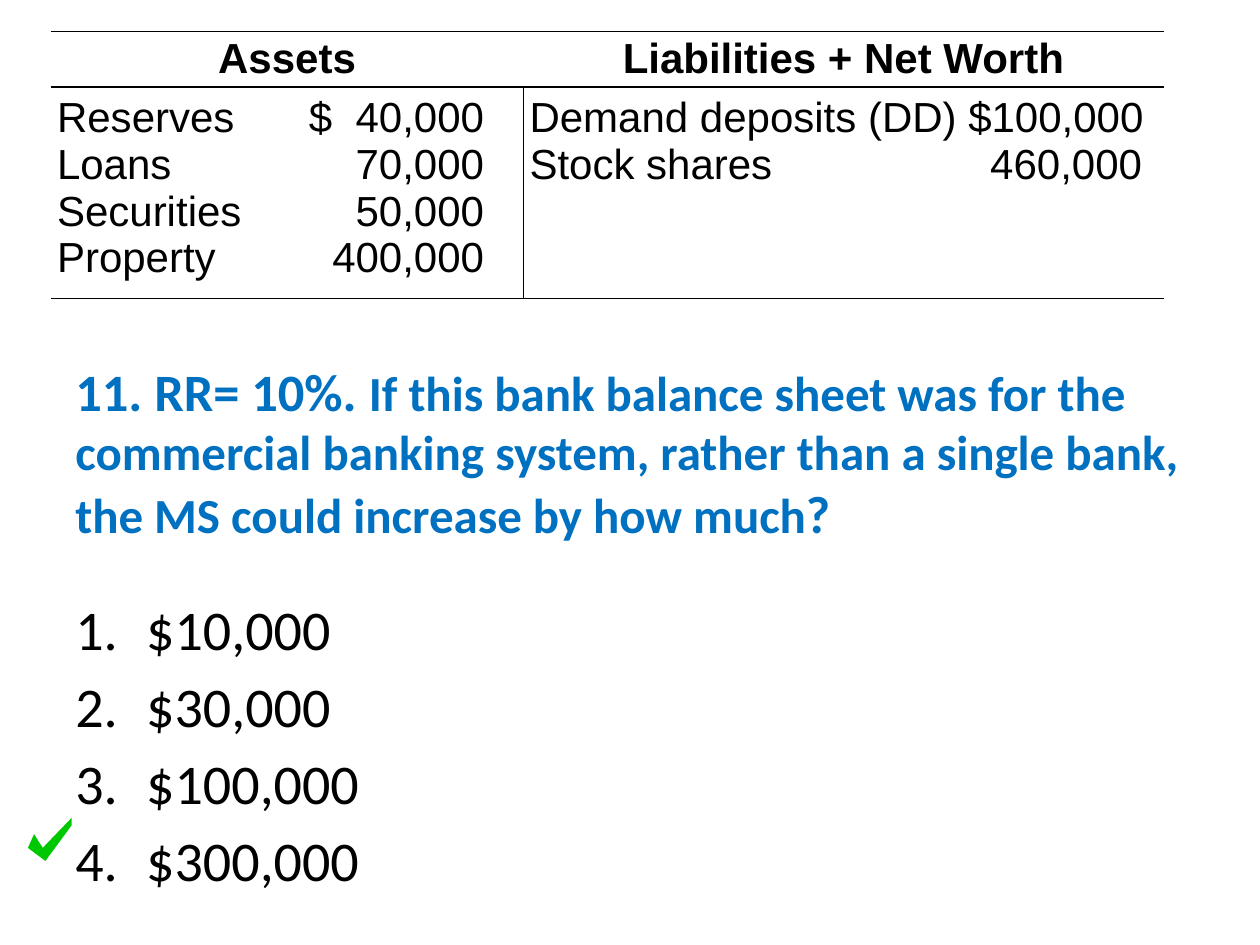
from lxml import etree
from pptx import Presentation
from pptx import util as u
from pptx.dml.color import RGBColor
from pptx.enum import text
from pptx.oxml import ns

BLACK, BLUE, GREEN = "000000", "0070C0", "00C800"
NO_STYLE = "{2D5ABB26-0587-4C30-8999-92F81FD0307C}"


def color(value):
    return RGBColor.from_string(value)


def element(parent, tag, **attributes):
    return etree.SubElement(parent, ns.qn(tag), attributes)


class SlideBuilder:
    """Holds the text style and current slide, and adds elements to it."""

    def __init__(self, slide, body_font="Calibri", table_font="Arial"):
        self.slide = slide
        self.body_font = body_font
        self.table_font = table_font

    def format_run(self, run, font, size, value, bold=False):
        run.font.name = font
        run.font.size = u.Pt(size)
        run.font.bold = bold
        run.font.color.rgb = color(value)

    def text_box(self, left, top, width, height, anchor):
        shape = self.slide.shapes.add_textbox(
            u.Pt(left), u.Pt(top), u.Pt(width), u.Pt(height))
        frame = shape.text_frame
        frame.word_wrap = True
        frame.vertical_anchor = anchor
        return frame

    def question(self, box, parts):
        frame = self.text_box(*box, text.MSO_ANCHOR.MIDDLE)
        for words, size in parts:
            run = frame.paragraphs[0].add_run()
            run.text = words
            self.format_run(run, self.body_font, size, BLUE, bold=True)

    def numbered_list(self, box, answers, size=32, indent=40.5):
        frame = self.text_box(*box, text.MSO_ANCHOR.TOP)
        frame.text = "\n".join(answers)
        for paragraph in frame.paragraphs:
            paragraph.space_before = u.Pt(5.6)
            properties = paragraph._p.get_or_add_pPr()
            properties.set("marL", str(u.Pt(indent)))
            properties.set("indent", str(-u.Pt(indent)))
            element(properties, "a:buFont", typeface="+mj-lt")
            element(properties, "a:buAutoNum", type="arabicPeriod")
            self.format_run(paragraph.runs[0], self.body_font, size, BLACK)

    def cell(self, cell, words, margins, sides, bold=False, tab=None):
        cell.fill.background()
        cell.margin_left, cell.margin_top, cell.margin_right, cell.margin_bottom = map(u.Pt, margins)
        cell.text_frame.text = words
        for paragraph in cell.text_frame.paragraphs:
            self.format_run(paragraph.runs[0], self.table_font, 24, BLACK, bold)
            if tab:
                tabs = element(paragraph._p.get_or_add_pPr(), "a:tabLst")
                element(tabs, "a:tab", pos=str(u.Pt(tab)), algn="r")
            else:
                paragraph.alignment = text.PP_ALIGN.CENTER
        properties = cell._tc.get_or_add_tcPr()
        for index, side in enumerate(sides):
            line = element(properties, f"a:ln{side}", w=str(u.Pt(1)))
            element(element(line, "a:solidFill"), "a:srgbClr", val=BLACK)
            properties.insert(index, line)

    def balance_sheet(self, left, top, widths, heights, headings, entries, tabs):
        table = self.slide.shapes.add_table(
            2, 2, u.Pt(left), u.Pt(top), u.Pt(sum(widths)), u.Pt(sum(heights))).table
        table.first_row = table.horz_banding = False
        table._tbl.tblPr[0].text = NO_STYLE
        for index, height in enumerate(heights):
            table.rows[index].height = u.Pt(height)
        for index, (width, divider) in enumerate(zip(widths, "RL")):
            table.columns[index].width = u.Pt(width)
            self.cell(table.cell(0, index), headings[index], (0, 2.2, 0, 0.7), "TB", bold=True)
            self.cell(table.cell(1, index), "\n".join(entries[index]),
                      (3.6, 4.3, 0, 1.4), divider + "TB", tab=tabs[index])

    def polygon(self, points, fill):
        start, *others = [(u.Pt(x), u.Pt(y)) for x, y in points]
        builder = self.slide.shapes.build_freeform(*start)
        builder.add_line_segments(others, close=True)
        shape = builder.convert_to_shape()
        shape.shadow.inherit = False
        shape.fill.solid()
        shape.fill.fore_color.rgb = color(fill)
        shape.line.fill.background()


def main():
    presentation = Presentation()
    presentation.slide_width, presentation.slide_height = u.Pt(720), u.Pt(540)
    builder = SlideBuilder(presentation.slides.add_slide(presentation.slide_layouts[6]))

    builder.question((36, 185.8, 648, 144), [
        ("11. RR= 10%. ", 30),
        ("If this bank balance sheet was for the commercial banking system, "
         "rather than a single bank, the MS could increase by how much", 28),
        ("?", 30),
    ])
    builder.balance_sheet(
        29, 18, widths=(270, 366), heights=(29.5, 112.5),
        headings=("Assets", "Liabilities + Net Worth"),
        entries=(
            ("Reserves\t$  40,000", "Loans\t70,000", "Securities\t50,000", "Property\t400,000"),
            ("Demand deposits (DD) $100,000", "Stock shares\t460,000"),
        ),
        tabs=(244, 350))
    builder.numbered_list((36, 336, 426, 180), ("$10,000", "$30,000", "$100,000", "$300,000"))
    builder.polygon([(19.5, 476.7), (16, 484.5), (26, 492), (41, 471.6), (41, 467.3), (24.5, 484.5)], GREEN)

    presentation.save("out.pptx")


if __name__ == "__main__":
    main()
